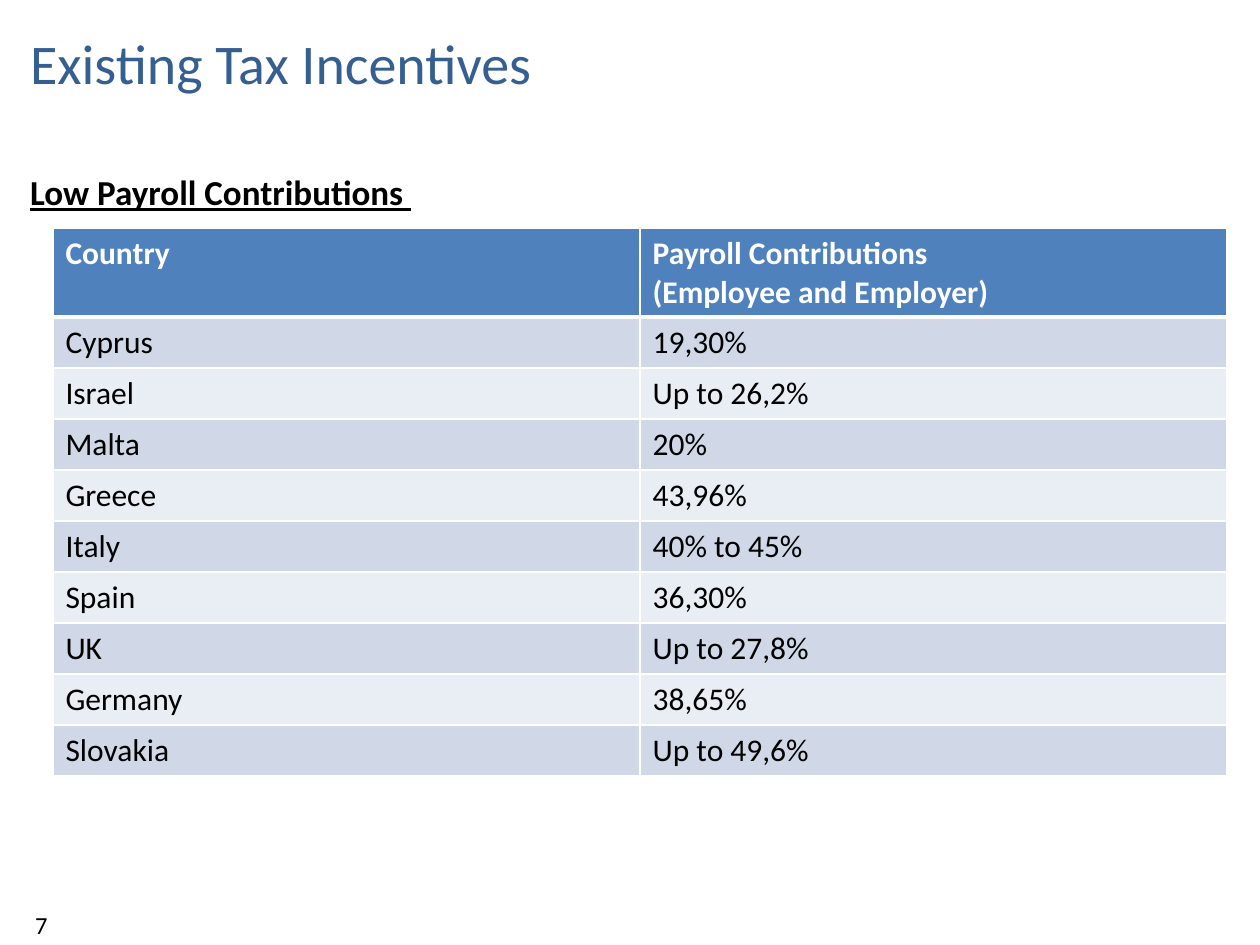
import pptx
import pptx.dml.color
import pptx.enum.text
import pptx.oxml
import pptx.oxml.ns
import pptx.util

RGB = pptx.dml.color.RGBColor
TITLE_BLUE = RGB(0x36, 0x5F, 0x91)
HEADER_BLUE = RGB(0x4F, 0x81, 0xBD)
BAND_DARK = RGB(0xD0, 0xD8, 0xE8)
BAND_LIGHT = RGB(0xE9, 0xED, 0xF4)
BLACK = RGB(0, 0, 0)
WHITE = RGB(0xFF, 0xFF, 0xFF)

SLIDE_WIDTH = pptx.util.Inches(10)
SLIDE_HEIGHT = pptx.util.Inches(7.5)
FONT = "Calibri"
HEADER_SHARE = 0.092  # row heights as shares of the slide's height
ROW_SHARE = 0.054

CONTRIBUTIONS = [
    ("Country", "Payroll Contributions\n(Employee and Employer)"),
    ("Cyprus", "19,30%"),
    ("Israel", "Up to 26,2%"),
    ("Malta", "20%"),
    ("Greece", "43,96%"),
    ("Italy", "40% to 45%"),
    ("Spain", "36,30%"),
    ("UK", "Up to 27,8%"),
    ("Germany", "38,65%"),
    ("Slovakia", "Up to 49,6%"),
]


def across(share):
    return int(SLIDE_WIDTH * share)


def down(share):
    return int(SLIDE_HEIGHT * share)


def style_runs(frame, size, color, bold=False, underline=False):
    for paragraph in frame.paragraphs:
        for run in paragraph.runs:
            run.font.name = FONT
            run.font.size = pptx.util.Pt(size)
            run.font.bold = bold
            run.font.underline = underline
            run.font.color.rgb = color


def add_label(slide, text, left, top, width, height, size, color, **emphasis):
    box = slide.shapes.add_textbox(
        across(left), down(top), across(width), down(height))
    frame = box.text_frame
    frame.word_wrap = True
    frame.text = text
    style_runs(frame, size, color, **emphasis)
    return frame


def set_borders(cell, top, bottom):
    """Draw white cell borders; widths are in points."""
    properties = cell._tc.get_or_add_tcPr()
    widths = {"lnL": 1, "lnR": 1, "lnT": top, "lnB": bottom}
    for position, (side, width) in enumerate(widths.items()):
        properties.insert(position, pptx.oxml.parse_xml(
            f'<a:{side} {pptx.oxml.ns.nsdecls("a")} w="{pptx.util.Pt(width)}">'
            f'<a:solidFill><a:srgbClr val="{WHITE}"/></a:solidFill></a:{side}>'))


def add_contribution_table(slide, left, top, width):
    row_shares = [HEADER_SHARE] + [ROW_SHARE] * (len(CONTRIBUTIONS) - 1)
    table = slide.shapes.add_table(
        len(CONTRIBUTIONS), len(CONTRIBUTIONS[0]),
        across(left), down(top), across(width), down(sum(row_shares))).table
    for row_index, entries in enumerate(CONTRIBUTIONS):
        table.rows[row_index].height = down(row_shares[row_index])
        is_header = row_index == 0
        band = BAND_DARK if row_index % 2 else BAND_LIGHT
        for column_index, entry in enumerate(entries):
            cell = table.cell(row_index, column_index)
            cell.text = entry
            style_runs(cell.text_frame, 18, WHITE if is_header else BLACK,
                       bold=is_header)
            cell.fill.solid()
            cell.fill.fore_color.rgb = HEADER_BLUE if is_header else band
            set_borders(cell, top=3 if row_index == 1 else 1,
                        bottom=3 if is_header else 1)


def main():
    deck = pptx.Presentation()
    deck.slide_width, deck.slide_height = SLIDE_WIDTH, SLIDE_HEIGHT
    slide = deck.slides.add_slide(deck.slide_layouts[6])

    # Title
    title = add_label(slide, "Existing Tax Incentives",
                      0.014, 0.021, 0.9, 0.09, 32, TITLE_BLUE)
    title.vertical_anchor = pptx.enum.text.MSO_ANCHOR.MIDDLE

    # Section heading
    heading = add_label(slide, "Low Payroll Contributions ",
                        0.014, 0.152, 0.932, 0.073, 20, BLACK,
                        bold=True, underline=True)
    heading.paragraphs[0].alignment = pptx.enum.text.PP_ALIGN.JUSTIFY
    heading.paragraphs[0].line_spacing = 1.5

    # Contributions by country
    add_contribution_table(slide, 0.042, 0.242, 0.932)

    # Slide number
    add_label(slide, "7", 0.018, 0.956, 0.082, 0.039, 14, BLACK)

    deck.save("out.pptx")


if __name__ == "__main__":
    main()
